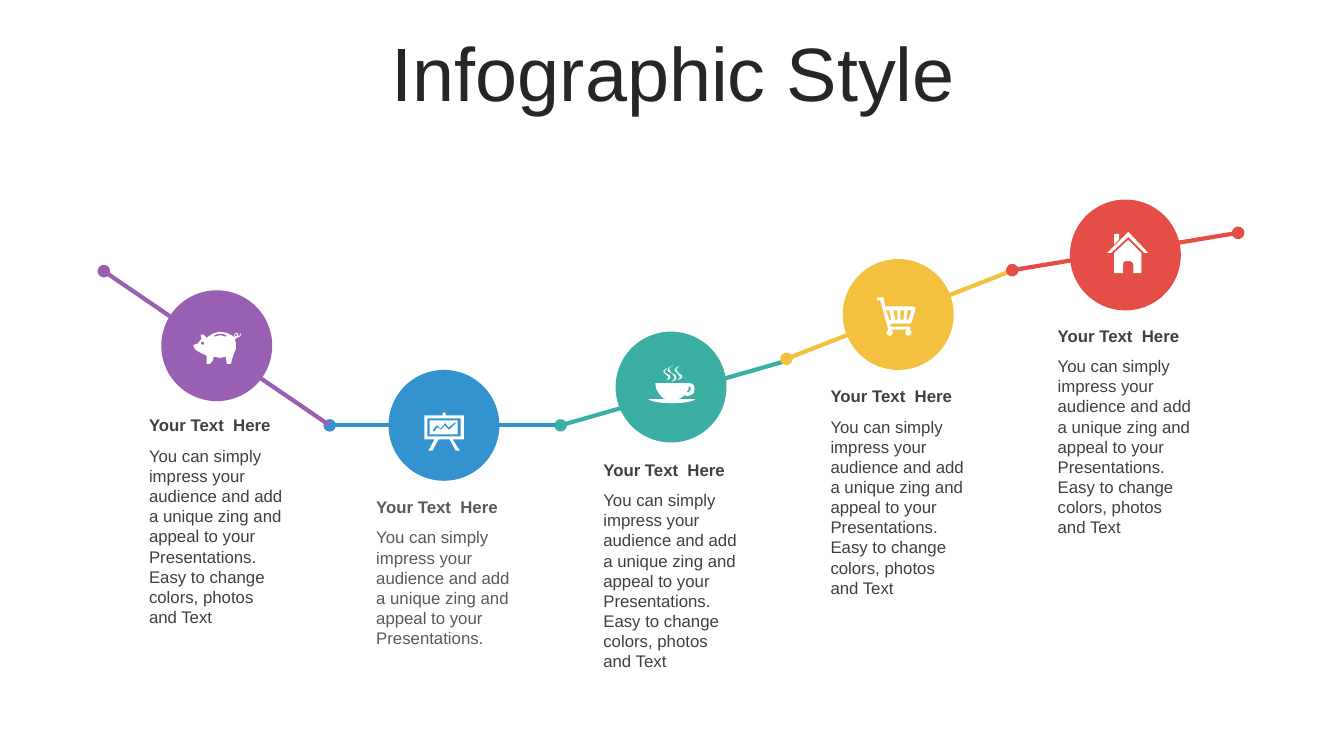
from math import cos, pi, sin

from lxml import etree
from pptx import Presentation
from pptx.dml.color import RGBColor
from pptx.enum.shapes import MSO_CONNECTOR, MSO_SHAPE
from pptx.enum.text import MSO_ANCHOR, MSO_AUTO_SIZE, PP_ALIGN
from pptx.oxml.ns import qn
from pptx.util import Inches, Pt

STRAIGHT = MSO_CONNECTOR.STRAIGHT
OVAL = MSO_SHAPE.OVAL
MIDDLE, TOP = MSO_ANCHOR.MIDDLE, MSO_ANCHOR.TOP
CENTER, LEFT = PP_ALIGN.CENTER, PP_ALIGN.LEFT
FIT_TEXT, NO_FIT = MSO_AUTO_SIZE.SHAPE_TO_FIT_TEXT, MSO_AUTO_SIZE.NONE

COLORS = {
    "purple": "995FB2", "blue": "3293CF", "teal": "3CAFA4",
    "yellow": "F3C040", "red": "E54E46", "white": "FFFFFF",
    "title": "262626", "dark": "404040", "gray": "595959",
}

CELL = 0.1
ICON_UNITS = 100
ICON_STEPS = 10

FIRST_CIRCLE, STEP_PITCH, CIRCLE_SIZE = 16, 22.53, 11
CAPTION_SHIFT, CAPTION_WIDTH, HEADING_HEIGHT = 2.2, 15.3, 3

HEADING = "Your Text  Here"
SHORT_BODY = ("You can simply impress your audience and add a unique zing "
              "and appeal to your Presentations.")
LONG_BODY = SHORT_BODY + " Easy to change colors, photos and Text"


def ring(x, y, radius, count=16):
    return [(x + radius * cos(2 * pi * i / count),
             y + radius * sin(2 * pi * i / count)) for i in range(count)]


PIG = [
    [(26, 0), (34, 1.5), (40, 5), (41, 7), (41, 6), (40, 3), (42, 1), (44, 2),
     (44, 4), (46, 4), (46, 1), (47, 3), (46, 5), (43, 6), (41, 8), (42, 11),
     (42, 17), (40, 22), (38, 28), (37, 32), (33, 32), (32, 25), (26, 26),
     (20, 25), (19, 29), (16, 32), (13, 32), (13, 24), (7, 21), (2, 18),
     (0, 15), (0, 13), (4, 12), (8, 7), (7, 3), (10, 3), (13, 6), (19, 2)],
    [(27, 2), (23, 2.5), (20, 4), (21, 5), (26.5, 3.5), (32, 5), (33, 4), (30, 2.5)],
    ring(9, 11.5, 1.5),
    ring(42, 3.3, 1.2),
]
BOARD = [
    [(18, 1), (19.5, 0), (21, 1), (21, 3), (39, 3), (39, 27), (28, 27), (35, 38),
     (31, 38), (25, 27), (14, 27), (8, 38), (4, 38), (10, 27), (0, 27), (0, 3),
     (18, 3)],
    [(3, 6), (36, 6), (36, 24), (3, 24)],
    [(5, 8), (33, 8), (33, 22), (5, 22)],
    [(30, 10), (24, 15), (21, 11), (20, 11), (16, 16), (13, 13), (12, 13),
     (8, 18), (9, 19), (10, 19), (13, 15), (16, 17), (17, 17), (20, 13),
     (24, 17), (25, 17), (31, 11), (31, 10)],
]
CUP = [
    [(7, 18), (40, 18), (43, 18.5), (45, 20), (46, 23), (45, 28), (42, 30),
     (39, 31), (36, 30), (32, 33), (29, 34), (47, 34), (43, 36), (35, 37.5),
     (24, 38), (12, 37.5), (4, 36), (0, 34), (18, 34), (15, 33), (11, 29), (8, 24)],
    [(40, 21), (40, 24), (38, 27), (40, 27.5), (42, 25), (42, 22)],
    [(19, 3), (16, 6), (17, 8), (21, 10), (22, 12), (21, 14), (18, 15),
     (20, 13), (20, 12), (18, 10), (15, 7), (15.5, 5)],
    [(25, 0), (21, 3), (21, 5), (23, 8), (27, 10), (28, 13), (27, 15),
     (23, 17), (26, 14), (26, 12), (24, 9), (19, 6), (20, 3)],
    [(31, 1), (28, 4), (28, 5), (30, 8), (33, 10), (34, 12), (32, 14),
     (29, 15), (31, 13), (31, 11), (29, 8.5), (26, 5), (28, 2.5)],
]
CART = [
    [(6, 0), (8, 10), (36, 10), (38, 11), (38, 13), (34, 26), (33, 27), (13, 27),
     (13, 30), (33, 30), (33, 33), (11, 33), (3, 4), (0, 4), (0, 1), (5, 1)],
    [(30, 14), (29, 23), (31, 23), (34, 14)],
    [(23, 14), (23, 23), (26, 23), (27, 14)],
    [(16, 14), (18, 23), (20, 23), (20, 14)],
    [(9, 14), (12, 23), (14, 23), (12, 14)],
    ring(31, 36, 3),
    ring(12.5, 36, 3),
]
HOUSE = [
    [(21, 8), (34, 21), (34, 41), (26, 41), (26, 32), (25, 30), (23, 29),
     (18, 29), (16.5, 30), (16, 32), (16, 41), (7, 41), (7, 21)],
    [(7, 2), (12, 2), (12, 7), (7, 13)],
    [(21, 0), (41, 21), (37, 21), (21, 5), (4, 21), (0, 21)],
]

LINKS = [
    ("blue", (32.7, 42.2), (55.1, 42.2), False),
    ("teal", (55.6, 42.2), (78, 35.8), False),
    ("yellow", (78, 35.6), (100.5, 26.8), False),
    ("red", (100.4, 26.8), (122.8, 23.1), True),
    ("purple", (10.3, 26.9), (32.7, 42.2), False),
]
STEPS = [
    ("purple", 28.8, 40.7, "dark", LONG_BODY, 19.2, PIG, (19.2, 32.9)),
    ("blue", 36.7, 48.8, "gray", SHORT_BODY, 13.1, BOARD, (42.1, 40.9)),
    ("teal", 32.9, 45.1, "dark", LONG_BODY, 19.2, CUP, (64.3, 36.2)),
    ("yellow", 25.7, 37.8, "dark", LONG_BODY, 19.2, CART, (87, 29.4)),
    ("red", 19.8, 31.8, "dark", LONG_BODY, 19.2, HOUSE, (109.8, 23)),
]


class Canvas:
    font = "Arial"
    line_width = Pt(3)

    def __init__(self, presentation):
        self.slide = presentation.slides.add_slide(presentation.slide_layouts[6])
        self.shapes = self.slide.shapes

    def grid(self, *cells):
        return [Inches(cell * CELL) for cell in cells]

    def color(self, name):
        return RGBColor.from_string(COLORS[name])

    def paint(self, shape, color):
        shape.shadow.inherit = False
        shape.fill.solid()
        shape.fill.fore_color.rgb = self.color(color)
        shape.line.fill.background()

    def text(self, shapes, box, words, size, color, bold=False,
             align=LEFT, anchor=TOP, fit=FIT_TEXT):
        frame = shapes.add_textbox(*self.grid(*box)).text_frame
        frame.word_wrap = True
        frame.auto_size = fit
        frame.vertical_anchor = anchor
        frame.text = words
        paragraph = frame.paragraphs[0]
        paragraph.alignment = align
        font = paragraph.runs[0].font
        font.name, font.size, font.bold = self.font, Pt(size), bold
        font.color.rgb = self.color(color)
        return paragraph

    def title(self, box, words):
        paragraph = self.text(self.shapes, box, words, 54, "title",
                              align=CENTER, anchor=MIDDLE, fit=NO_FIT)
        paragraph.line_spacing = 0.9
        paragraph.space_before = Pt(10)

    def link(self, color, start, end, dot_at_end):
        connector = self.shapes.add_connector(STRAIGHT, *self.grid(*start, *end))
        connector.line.color.rgb = self.color(color)
        connector.line.width = self.line_width
        properties = connector.element.spPr
        line = properties.find(qn("a:ln"))
        for tag in ["a:headEnd", "a:tailEnd"][:1 + dot_at_end]:
            etree.SubElement(line, qn(tag), type="oval")
        etree.SubElement(properties, qn("a:effectLst"))

    def circle(self, left, top, size, color):
        self.paint(self.shapes.add_shape(OVAL, *self.grid(left, top, size, size)), color)

    def caption(self, left, top, body, body_height, color):
        group = self.shapes.add_group_shape()
        self.text(group.shapes, (left, top, CAPTION_WIDTH, HEADING_HEIGHT),
                  HEADING, 12, color, bold=True)
        self.text(group.shapes, (left, top + HEADING_HEIGHT, CAPTION_WIDTH, body_height),
                  body, 12, color)

    def icon(self, outlines, origin):
        scaled = [[(x * ICON_STEPS, y * ICON_STEPS) for x, y in outline]
                  for outline in outlines]
        builder = self.shapes.build_freeform(
            *scaled[0][0], scale=Inches(1) / (ICON_UNITS * ICON_STEPS))
        builder.add_line_segments(scaled[0][1:])
        for outline in scaled[1:]:
            builder.move_to(*outline[0])
            builder.add_line_segments(outline[1:])
        self.paint(builder.convert_to_shape(*self.grid(*origin)), "white")


def main():
    presentation = Presentation()
    presentation.slide_width, presentation.slide_height = Inches(13.33), Inches(7.5)
    canvas = Canvas(presentation)
    canvas.title((3.5, 3.7, 126.6, 7.9), "Infographic Style")
    for link in LINKS:
        canvas.link(*link)
    for index, (color, top, caption_top, ink, body, height, icon, origin) in enumerate(STEPS):
        left = FIRST_CIRCLE + index * STEP_PITCH
        canvas.circle(left, top, CIRCLE_SIZE, color)
        canvas.caption(left - CAPTION_SHIFT, caption_top, body, height, ink)
        canvas.icon(icon, origin)
    presentation.save("out.pptx")


if __name__ == "__main__":
    main()
